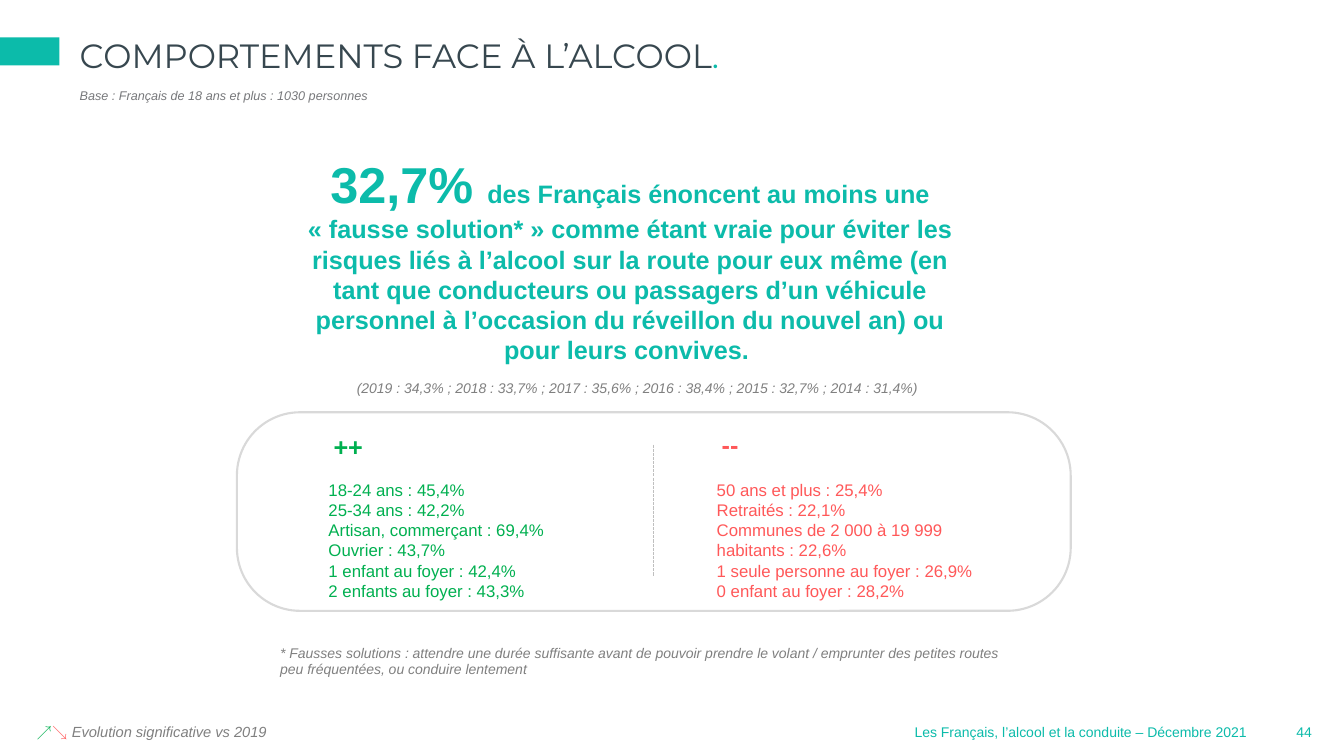
from dataclasses import dataclass

from lxml import etree
from pptx import Presentation
from pptx.dml.color import RGBColor
from pptx.enum import dml, shapes, text
from pptx.oxml import ns
from pptx.util import Inches, Pt


@dataclass(frozen=True)
class Theme:
    teal: str = "0CBBAA"
    slate: str = "37474F"
    base_grey: str = "77787B"
    grey: str = "808080"
    dark_grey: str = "7F7F7F"
    green: str = "00B050"
    red: str = "FF5859"
    white: str = "FFFFFF"
    border: str = "D9D9D9"
    divider: str = "BFBFBF"
    body_font: str = "Arial"
    title_font: str = "Montserrat"
    figure: float = 36
    title: float = 24
    heading: float = 18
    profile: float = 12
    arrow: float = 11
    legend: float = 10.5
    note: float = 10
    base: float = 9


THEME = Theme()
LEFT, CENTER, RIGHT = text.PP_ALIGN.LEFT, text.PP_ALIGN.CENTER, text.PP_ALIGN.RIGHT


def run(words, size, color, bold=False, italic=False, font=THEME.body_font):
    return words, size, color, bold, italic, font


def add_text(page, area, paragraphs, align=LEFT, wrap=True, inset=True, anchor=text.MSO_ANCHOR.TOP):
    box = page.shapes.add_textbox(*map(Inches, area))
    frame = box.text_frame
    frame.word_wrap = wrap
    frame.vertical_anchor = anchor
    if not inset:
        frame.margin_left = frame.margin_right = frame.margin_top = frame.margin_bottom = 0
    for index, runs in enumerate(paragraphs):
        para = frame.paragraphs[0] if index == 0 else frame.add_paragraph()
        para.alignment = align
        for words, size, color, bold, italic, font in runs:
            span = para.add_run()
            span.text = words
            span.font.size = Pt(size)
            span.font.color.rgb = RGBColor.from_string(color)
            span.font.bold = bold
            span.font.italic = italic
            span.font.name = font


def add_panel(page, kind, area, fill, border=None):
    panel = page.shapes.add_shape(kind, *map(Inches, area))
    panel.shadow.inherit = False
    panel.fill.solid()
    panel.fill.fore_color.rgb = RGBColor.from_string(fill)
    if border:
        panel.line.color.rgb = RGBColor.from_string(border)
        panel.line.width = Pt(1.5)
    else:
        panel.line.fill.background()
    return panel


def add_header(page, left, top, width):
    add_panel(page, shapes.MSO_SHAPE.RECTANGLE, (left, top + 0.06, 0.59, 0.28), THEME.teal)
    title = [
        run("COMPORTEMENTS FACE À L’ALCOOL", THEME.title, THEME.slate, font=THEME.title_font),
        run(".", THEME.title, THEME.teal, font=THEME.title_font),
    ]
    add_text(page, (left + 0.79, top, width, 0.47), [title], inset=False, anchor=text.MSO_ANCHOR.MIDDLE)
    base = run("Base : Français de 18 ans et plus : 1030 personnes", THEME.base, THEME.base_grey, italic=True)
    add_text(page, (left + 0.79, top + 0.56, width, 0.2), [[base]], inset=False)


def add_key_figure(page, left, top, width):
    message = (
        "des Français énoncent au moins une «\u00a0fausse solution*\u00a0» comme étant vraie pour éviter "
        "les risques liés à l’alcool sur la route pour eux même (en tant que conducteurs ou passagers "
        "d’un véhicule personnel à l’occasion du réveillon du nouvel an) ou pour leurs convives. "
    )
    figure = [
        run("32,7% ", THEME.figure, THEME.teal, bold=True),
        run(message, THEME.heading, THEME.teal, bold=True),
    ]
    add_text(page, (left, top, width, 2.52), [figure], CENTER)
    history = [
        run("(2019 : 34,3% ; 2018 : 33,7% ; ", THEME.note, THEME.grey, italic=True),
        run("2017 : 35,6% ; ", THEME.note, THEME.dark_grey, italic=True),
        run("2016 : 38,4% ; 2015 : 32,7% ; 2014 : 31,4%)", THEME.note, THEME.grey, italic=True),
    ]
    add_text(page, (left + 0.56, top + 2.25, 5.79, 0.27), [history], wrap=False)


def add_profile(page, left, top, width, sign, sign_top, color, lines):
    add_text(page, (left + 0.05, sign_top, 0.6, 0.4), [[run(sign, THEME.heading, color, bold=True)]])
    add_text(page, (left, top, width, 1.31), [[run(line, THEME.profile, color)] for line in lines])


def add_profiles(page, left, top, width, height):
    frame = add_panel(
        page, shapes.MSO_SHAPE.ROUNDED_RECTANGLE, (left, top, width, height), THEME.white, THEME.border
    )
    frame.adjustments[0] = 0.318
    over = [
        "18-24 ans : 45,4%",
        "25-34 ans : 42,2%",
        "Artisan, commerçant : 69,4%",
        "Ouvrier : 43,7%",
        "1 enfant au foyer : 42,4%",
        "2 enfants au foyer : 43,3%",
    ]
    under = [
        "50 ans et plus : 25,4%",
        "Retraités : 22,1%",
        "Communes de 2 000 à 19 999 habitants : 22,6%",
        "1 seule personne au foyer : 26,9%",
        "0 enfant au foyer : 28,2%",
    ]
    add_profile(page, left + 0.81, top + 0.62, 2.73, "++", top + 0.14, THEME.green, over)
    add_profile(page, left + 4.66, top + 0.62, 3.02, "--", top + 0.12, THEME.red, under)
    middle = Inches(left + width / 2)
    divider = page.shapes.add_connector(
        shapes.MSO_CONNECTOR.STRAIGHT, middle, Inches(top + 0.32), middle, Inches(top + 1.63)
    )
    divider.line.color.rgb = RGBColor.from_string(THEME.divider)
    divider.line.width = Pt(0.75)
    divider.line.dash_style = dml.MSO_LINE.SQUARE_DOT
    etree.SubElement(divider.element.spPr, ns.qn("a:effectLst"))


def add_footnote(page, left, top, width):
    note = (
        "* Fausses solutions : attendre une durée suffisante avant de pouvoir prendre le volant / "
        "emprunter des petites routes peu fréquentées, ou conduire lentement"
    )
    add_text(page, (left, top, width, 0.44), [[run(note, THEME.note, THEME.grey, italic=True)]])


def add_footer(page, left, top):
    legend = [
        run("↗", THEME.arrow, THEME.green),
        run("↘ ", THEME.arrow, THEME.red),
        run("Evolution significative vs 2019", THEME.legend, THEME.grey, italic=True),
    ]
    add_text(page, (left, top, 2.79, 0.29), [legend], CENTER)
    source = run("Les Français, l’alcool et la conduite – Décembre 2021", THEME.note, THEME.teal)
    add_text(page, (left + 8.83, top + 0.02, 3.52, 0.27), [[source]], RIGHT, wrap=False)
    number = run("44", THEME.note, THEME.teal)
    add_text(page, (left + 12.6, top + 0.02, 0.45, 0.27), [[number]], CENTER, wrap=False)


def main():
    deck = Presentation()
    deck.slide_width, deck.slide_height = Inches(13.33), Inches(7.5)
    page = deck.slides.add_slide(deck.slide_layouts[6])
    add_header(page, 0, 0.31, 11.81)
    add_key_figure(page, 2.88, 1.47, 6.74)
    add_profiles(page, 2.35, 4.09, 8.27, 1.97)
    add_footnote(page, 2.68, 6.34, 7.32)
    add_footer(page, 0.11, 7.11)
    deck.save("out.pptx")


if __name__ == "__main__":
    main()
